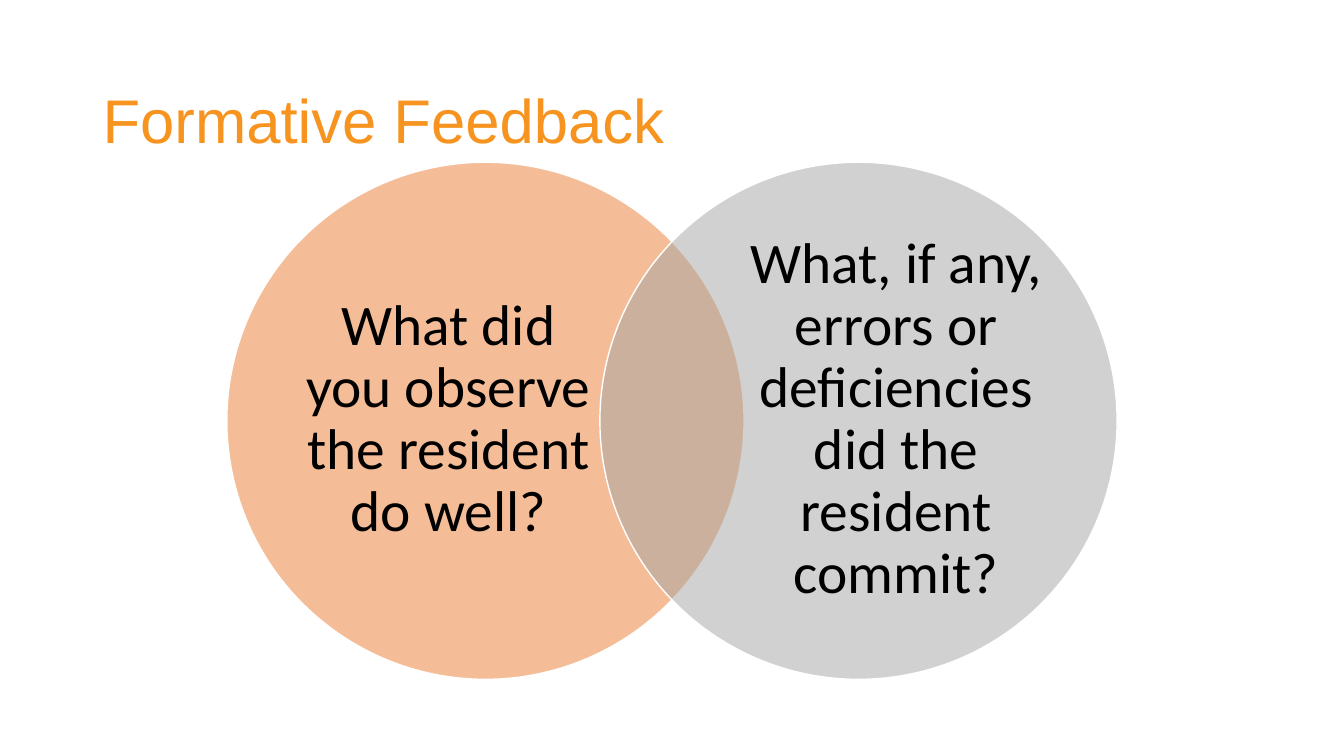
from dataclasses import dataclass

from lxml.etree import SubElement
from pptx import Presentation
from pptx.dml.color import RGBColor
from pptx.enum.shapes import MSO_SHAPE
from pptx.enum.text import MSO_ANCHOR, PP_ALIGN
from pptx.oxml.ns import qn
from pptx.slide import Slide
from pptx.util import Inches, Pt

TITLE_ORANGE = RGBColor(0xF6, 0x94, 0x1F)
ORANGE = RGBColor(0xED, 0x7D, 0x31)
GRAY = RGBColor(0xA5, 0xA5, 0xA5)
WHITE = RGBColor(0xFF, 0xFF, 0xFF)
BLACK = RGBColor(0x00, 0x00, 0x00)

CIRCLE_TOP, DIAMETER = 1.61, 5.13
LABEL_TOP, LABEL_WIDTH, LABEL_HEIGHT = 2.21, 2.96, 3.92


@dataclass
class VennCircle:
    left: float
    label_left: float
    color: RGBColor
    question: str


CIRCLES = [
    VennCircle(2.25, 2.97, ORANGE, "What did you observe the resident do well?"),
    VennCircle(5.95, 7.41, GRAY,
               "What, if any, errors or deficiencies did the resident commit?"),
]


def add_text(s: Slide, text: str, left: float, top: float, width: float,
             height: float, *, font: str, size: float, color: RGBColor,
             align: PP_ALIGN = PP_ALIGN.LEFT, inset_x: float = 0,
             inset_y: float = 0) -> None:
    tb = s.shapes.add_textbox(Inches(left), Inches(top),
                              Inches(width), Inches(height))
    tf = tb.text_frame
    tf.word_wrap = True
    tf.vertical_anchor = MSO_ANCHOR.MIDDLE
    tf.margin_left = tf.margin_right = Inches(inset_x)
    tf.margin_top = tf.margin_bottom = Inches(inset_y)
    p = tf.paragraphs[0]
    p.alignment = align
    p.line_spacing = 0.9
    r = p.add_run()
    r.text = text
    r.font.name = font
    r.font.size = Pt(size)
    r.font.color.rgb = color


def add_circle(s: Slide, circle: VennCircle) -> None:
    sp = s.shapes.add_shape(MSO_SHAPE.OVAL, Inches(circle.left),
                            Inches(CIRCLE_TOP), Inches(DIAMETER), Inches(DIAMETER))
    sp.shadow.inherit = False
    sp.fill.solid()
    sp.fill.fore_color.rgb = circle.color
    sp.line.color.rgb = WHITE
    sp.line.width = Pt(1)
    # Half-transparent fill lets the overlap show
    fill_color = sp.fill._xPr.find(qn("a:solidFill")).find(qn("a:srgbClr"))
    SubElement(fill_color, qn("a:alpha")).set("val", "50000")


def main() -> None:
    prs = Presentation()
    prs.slide_width, prs.slide_height = Inches(13.33), Inches(7.5)
    s = prs.slides.add_slide(prs.slide_layouts[6])

    # Title
    add_text(s, "Formative Feedback", 0.92, 0.5, 11.5, 1.45, font="Arial",
             size=44, color=TITLE_ORANGE, inset_x=0.1, inset_y=0.05)

    # Venn diagram
    for circle in CIRCLES:
        add_circle(s, circle)
        add_text(s, circle.question, circle.label_left, LABEL_TOP, LABEL_WIDTH,
                 LABEL_HEIGHT, font="Calibri", size=41, color=BLACK,
                 align=PP_ALIGN.CENTER)

    prs.save("out.pptx")


if __name__ == "__main__":
    main()
